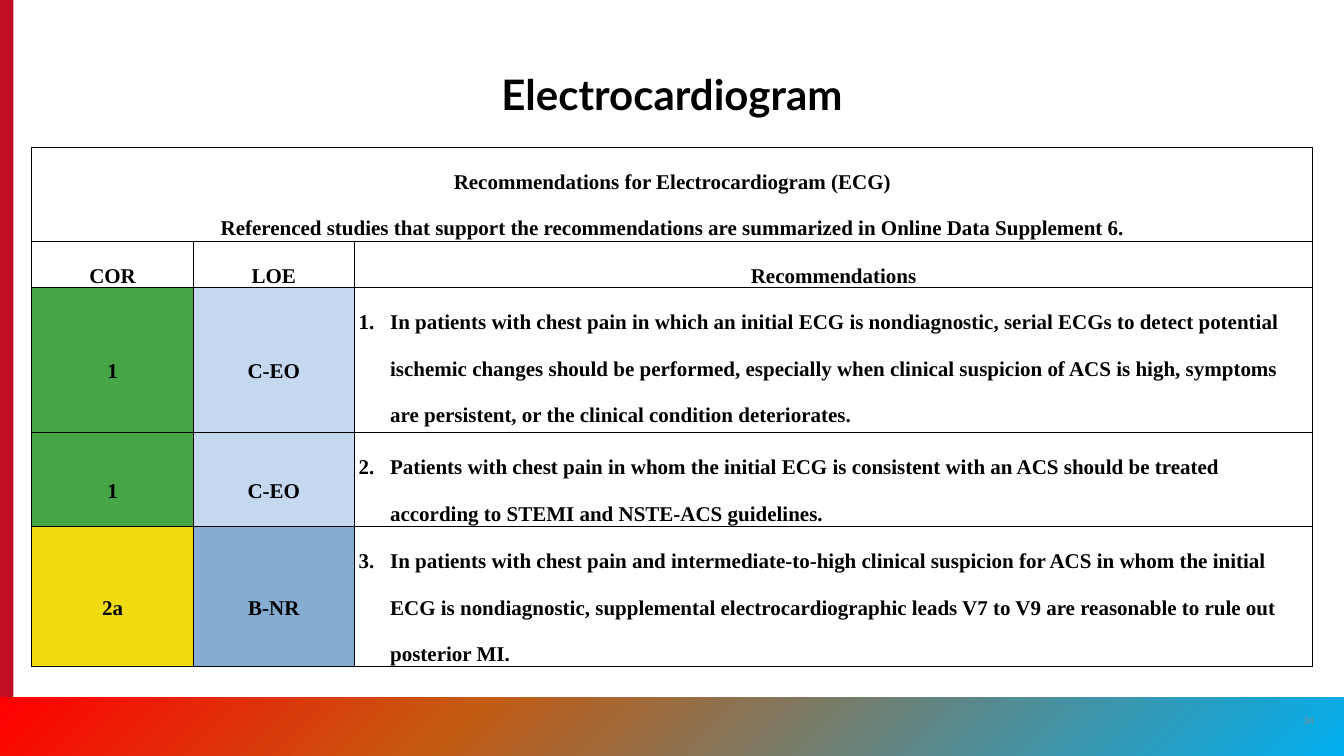
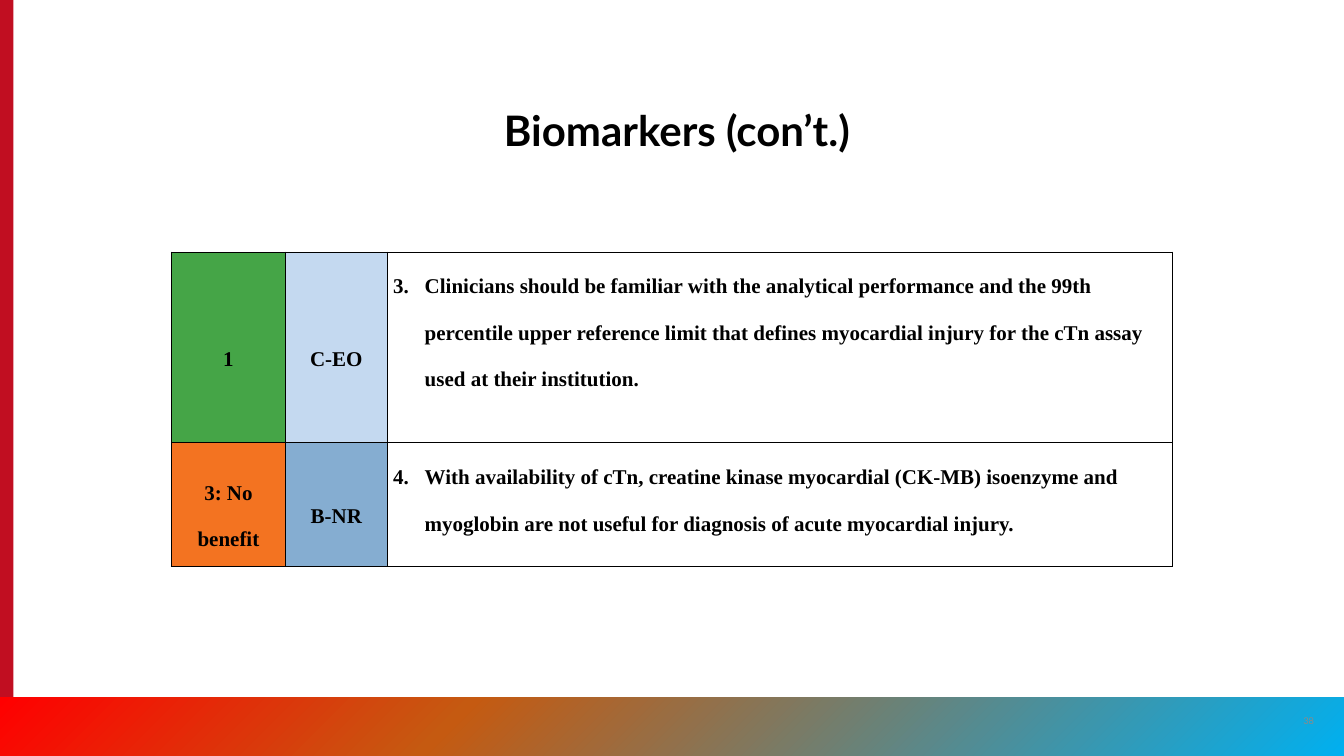
import pptx
import pptx.dml.color
import pptx.enum.shapes
import pptx.enum.text
import pptx.oxml
import pptx.oxml.ns
import pptx.util

Pt = pptx.util.Pt
ALIGN = pptx.enum.text.PP_ALIGN
ANCHOR = pptx.enum.text.MSO_ANCHOR
RECT = pptx.enum.shapes.MSO_SHAPE.RECTANGLE
NS = pptx.oxml.ns.nsdecls("a")

WIDE, HIGH = 1152, 648
BAND = 50.4
SANS, SERIF = "Lato", "Times New Roman"
HUES = {
    "black": "000000", "gray": "8A8B8A", "red": "C10E21",
    "sky": "00B0F0", "rust": "C55A11", "flame": "FF0000",
    "1": "45A547", "2a": "F0DA10", "3: No benefit": "F37321",
    "C-EO": "C4D9F0", "B-NR": "85ADD1",
}


def tint(name):
    """Return the named colour."""
    return pptx.dml.color.RGBColor.from_string(HUES[name])


def write(frame, text, size=18, font=SERIF, hue="black", bold=True,
          align=ALIGN.CENTER, line=2.0, start=None):
    """Fill a text frame, one paragraph a line, numbered from start if given."""
    frame.word_wrap = True
    for rank, words in enumerate(text.split("\n")):
        para = frame.add_paragraph() if rank else frame.paragraphs[0]
        para.alignment = align
        para.line_spacing = line
        if start:
            props = para._p.get_or_add_pPr()
            props.set("marL", str(Pt(27)))
            props.set("indent", str(Pt(-27)))
            props.append(pptx.oxml.parse_xml(
                f'<a:buAutoNum {NS} type="arabicPeriod" startAt="{start}"/>'))
        run = para.add_run()
        run.text = words
        run.font.size = Pt(size)
        run.font.name = font
        run.font.bold = bold
        run.font.color.rgb = tint(hue)


def block(slide, left, top, width, height):
    """Add a plain red rectangle."""
    shape = slide.shapes.add_shape(RECT, Pt(left), Pt(top), Pt(width), Pt(height))
    shape.shadow.inherit = False
    shape.fill.solid()
    shape.fill.fore_color.rgb = tint("red")
    shape.line.fill.background()
    return shape


def bands(slide, layout):
    """Draw the side and foot bands and move them to the shared layout."""
    side = block(slide, 0, 0, 11.5, HIGH)
    foot = block(slide, 0, HIGH - BAND, WIDE, BAND)
    foot.rotation = 180
    stops = "".join(
        f'<a:gs pos="{at * 1000}"><a:srgbClr val="{HUES[hue]}"/></a:gs>'
        for at, hue in ((0, "sky"), (66, "rust"), (100, "flame")))
    blend = pptx.oxml.parse_xml(
        f'<a:gradFill {NS} rotWithShape="1"><a:gsLst>{stops}</a:gsLst>'
        '<a:lin ang="2700000" scaled="0"/></a:gradFill>')
    solid = foot.element.spPr.find(pptx.oxml.ns.qn("a:solidFill"))
    foot.element.spPr.replace(solid, blend)
    for shape in (side, foot):
        layout.element.cSld.spTree.append(shape.element)


def head(slide, text, left, top, width):
    """Place and format the slide title."""
    title = slide.shapes.title
    title.left, title.top = Pt(left), Pt(top)
    title.width, title.height = Pt(width), Pt(45)
    frame = title.text_frame
    frame.auto_size = pptx.enum.text.MSO_AUTO_SIZE.NONE
    frame.vertical_anchor = ANCHOR.TOP
    write(frame, text, size=36, font=SANS, line=0.9)


def folio(slide, text):
    """Write the page number on the foot band."""
    box = slide.shapes.add_textbox(Pt(1104.5), Pt(600.5), Pt(34.5), Pt(34.5))
    box.text_frame.vertical_anchor = ANCHOR.MIDDLE
    write(box.text_frame, text, size=8, font=SANS, hue="gray", bold=False, line=1.0)


def edge(frame):
    """Give every cell of a table frame thin black borders."""
    for props in list(frame.element.iter(pptx.oxml.ns.qn("a:tcPr"))):
        for rank, side in enumerate("LRTB"):
            props.insert(rank, pptx.oxml.parse_xml(
                f'<a:ln{side} {NS} w="{Pt(1)}"><a:solidFill>'
                f'<a:srgbClr val="{HUES["black"]}"/></a:solidFill></a:ln{side}>'))


def grid(slide, left, top, cols, rows, pad, start):
    """Add a table of graded advice; a row with one text spans all columns."""
    tall = sum(height for height, *texts in rows)
    frame = slide.shapes.add_table(len(rows), len(cols), Pt(left), Pt(top),
                                   Pt(sum(cols)), Pt(tall))
    table = frame.table
    table.first_row = table.horz_banding = False
    for col, width in zip(table.columns, cols):
        col.width = Pt(width)
    for r, (height, *texts) in enumerate(rows):
        table.rows[r].height = Pt(height)
        graded = texts[0] in HUES
        for c in range(len(cols)):
            cell = table.cell(r, c)
            cell.margin_left = cell.margin_right = Pt(pad)
            cell.margin_top = cell.margin_bottom = 0
            cell.fill.background()
            if c >= len(texts):
                continue
            text = texts[c]
            if text in HUES:
                cell.fill.solid()
                cell.fill.fore_color.rgb = tint(text)
            if graded and c == 2:
                write(cell.text_frame, text, align=ALIGN.LEFT, start=start)
                start += 1
            else:
                write(cell.text_frame, text)
                if len(texts) > 1:
                    cell.vertical_anchor = ANCHOR.MIDDLE
        if len(texts) == 1:
            table.cell(r, 0).merge(table.cell(r, len(cols) - 1))
    edge(frame)


def cardio(slide):
    """Build the electrocardiogram slide."""
    head(slide, "Electrocardiogram", 265.5, 60, 621)
    grid(slide, 27.4, 126, (138.2, 138.2, 821.5), (
        (80.6, "Recommendations for Electrocardiogram (ECG)\n"
               "Referenced studies that support the recommendations are "
               "summarized in Online Data Supplement 6."),
        (37.4, "COR", "LOE", "Recommendations"),
        (124.6, "1", "C-EO",
         "In patients with chest pain in which an initial ECG is nondiagnostic, "
         "serial ECGs to detect potential ischemic changes should be performed, "
         "especially when clinical suspicion of ACS is high, symptoms are "
         "persistent, or the clinical condition deteriorates."),
        (80.6, "1", "C-EO",
         "Patients with chest pain in whom the initial ECG is consistent with an "
         "ACS should be treated according to STEMI and NSTE-ACS guidelines."),
        (119, "2a", "B-NR",
         "In patients with chest pain and intermediate-to-high clinical suspicion "
         "for ACS in whom the initial ECG is nondiagnostic, supplemental "
         "electrocardiographic leads V7 to V9 are reasonable to rule out "
         "posterior MI."),
    ), pad=3.6, start=1)
    folio(slide, "34")


def marker(slide):
    """Build the biomarkers slide."""
    head(slide, "Biomarkers (con’t.)", 389, 90.5, 382.5)
    grid(slide, 146.9, 216, (97.9, 87.1, 673.2), (
        (163.5, "1", "C-EO",
         "Clinicians should be familiar with the analytical performance and the "
         "99th percentile upper reference limit that defines myocardial injury "
         "for the cTn assay used at their institution."),
        (106.5, "3: No benefit", "B-NR",
         "With availability of cTn, creatine kinase myocardial (CK-MB) isoenzyme "
         "and myoglobin are not useful for diagnosis of acute myocardial injury."),
    ), pad=5.2, start=3)
    folio(slide, "38")


def main():
    """Build and save the deck."""
    deck = pptx.Presentation()
    deck.slide_width, deck.slide_height = Pt(WIDE), Pt(HIGH)
    layout = deck.slide_layouts[5]
    first, second = (deck.slides.add_slide(layout) for _ in range(2))
    bands(first, layout)
    cardio(first)
    marker(second)
    deck.save("out.pptx")


if __name__ == "__main__":
    main()
